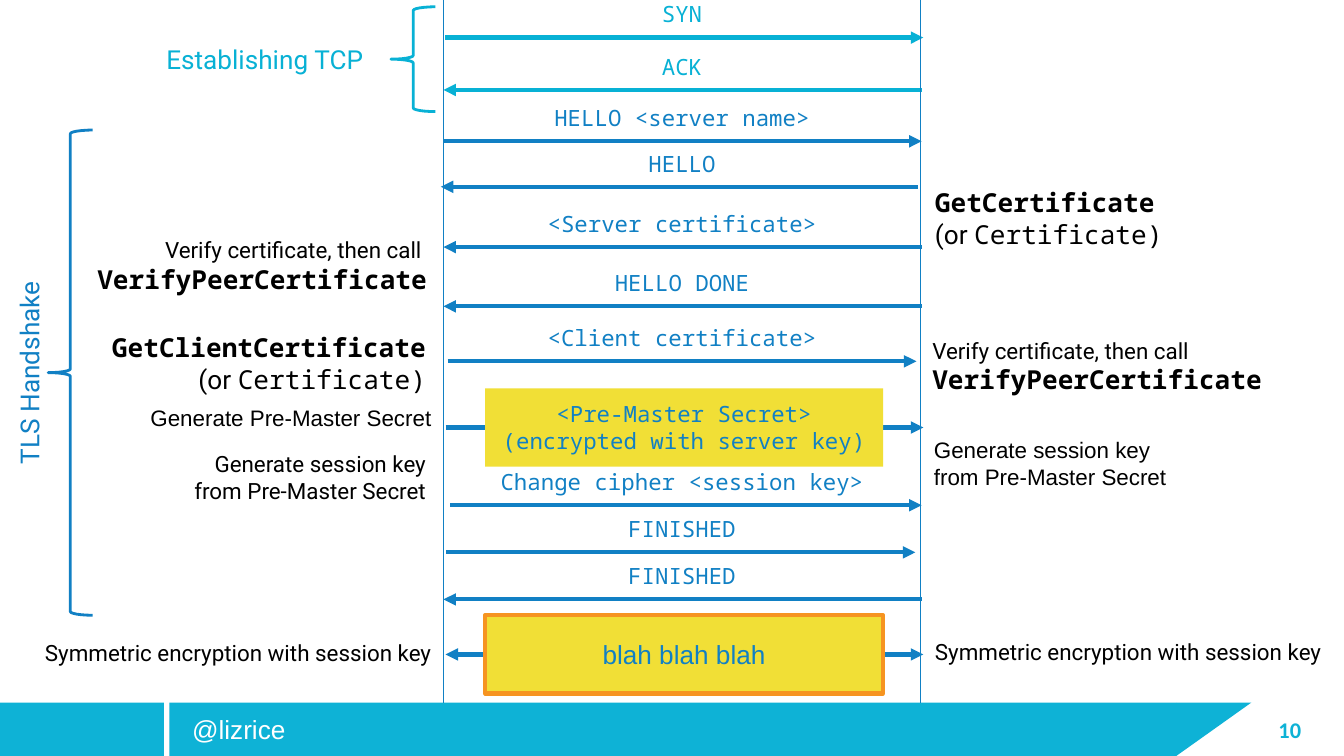
from dataclasses import dataclass

from lxml import etree
from pptx import Presentation
from pptx import util as u
from pptx.dml.color import RGBColor
from pptx.enum import shapes, text
from pptx.oxml import ns

SHAPE = shapes.MSO_SHAPE
ALIGN = text.PP_ALIGN
ANCHOR = text.MSO_ANCHOR


@dataclass(frozen=True)
class Theme:
    blue: str = "1180C4"
    cyan: str = "08B1D5"
    bar: str = "0EB2D6"
    yellow: str = "F1DF36"
    orange: str = "F69421"
    black: str = "000000"
    white: str = "FFFFFF"
    small: int = 12
    large: int = 14
    thin: float = 0.75
    medium: float = 1.5
    thick: float = 2.25
    inset: float = 0.25


@dataclass(frozen=True)
class Style:
    name: str
    size: int
    color: str
    bold: bool = False

    def apply(self, font):
        font.name, font.size, font.bold = self.name, u.Pt(self.size), self.bold
        font.color.rgb = RGBColor.from_string(self.color)


T = Theme()
BODY = Style("Roboto", T.small, T.black)
PLAIN = Style("Arial", T.small, T.black)
CODE = Style("Noto Sans Mono", T.large, T.black)
CODE_BOLD = Style("Noto Sans Mono", T.large, T.black, True)
OR = Style("Roboto", T.large, T.black)
MESSAGE = Style("Noto Sans Mono", T.small, T.blue)
TCP_MESSAGE = Style("Noto Sans Mono", T.small, T.cyan)

OR_CERTIFICATE = [("(or ", OR), ("Certificate)", CODE)]
VERIFY_PEER = [("VerifyPeerCertificate", CODE_BOLD)]


def box_cm(*lengths):
    return [u.Cm(v) for v in lengths]


def fill_text(sp, paragraphs, align, anchor=ANCHOR.TOP, inset_y=T.inset):
    tf = sp.text_frame
    tf.word_wrap = True
    tf.vertical_anchor = anchor
    tf.margin_left = tf.margin_right = u.Cm(T.inset)
    tf.margin_top = tf.margin_bottom = u.Cm(inset_y)
    for i, runs in enumerate(paragraphs):
        p = tf.add_paragraph() if i else tf.paragraphs[0]
        p.alignment = align
        if len(runs) == 1:
            p.text = runs[0][0]
            runs[0][1].apply(p.font)
            continue
        for content, style in runs:
            r = p.add_run()
            r.text = content
            style.apply(r.font)


def add_text(s, box, paragraphs, align, **options):
    sp = s.shapes.add_textbox(*box_cm(*box))
    fill_text(sp, paragraphs, align, **options)
    return sp


def add_block(s, kind, box, fill=None, line=None, width=T.thick):
    sp = s.shapes.add_shape(kind, *box_cm(*box))
    sp.shadow.inherit = False
    if fill:
        sp.fill.solid()
        sp.fill.fore_color.rgb = RGBColor.from_string(fill)
    else:
        sp.fill.background()
    if line:
        sp.line.color.rgb = RGBColor.from_string(line)
        sp.line.width = u.Pt(width)
    else:
        sp.line.fill.background()
    return sp


def add_line(s, x1, y1, x2, y2, color, width=T.thick, ends=()):
    c = s.shapes.add_connector(shapes.MSO_CONNECTOR.STRAIGHT, *box_cm(x1, y1, x2, y2))
    c.line.color.rgb = RGBColor.from_string(color)
    c.line.width = u.Pt(width)
    for end in ends:
        etree.SubElement(c.line._get_or_add_ln(), ns.qn(f"a:{end}"), type="triangle")
    etree.SubElement(c.element.spPr, ns.qn("a:effectLst"))


def add_footer(s, x, y, w, h):
    add_block(s, SHAPE.RECTANGLE, (x + 3.2, y, w - 6.37, h), T.bar)
    add_block(s, SHAPE.RECTANGLE, (x, y, 3.1, h), T.bar)
    corner = add_block(s, SHAPE.RIGHT_TRIANGLE, (x + w - 3.17, y, 1.42, h), T.bar)
    corner.rotation = 180
    corner.element.spPr.get_or_add_xfrm().set("flipH", "1")
    add_text(s, (x + w - 1.7, y + 0.13, 1.14, 0.76),
             [[("10", Style("Calibri", T.small, T.bar, True))]], ALIGN.RIGHT, inset_y=0.13)
    add_text(s, (x + 3.38, y, 6.93, h),
             [[("@lizrice", Style("Arial", T.large, T.white))]], ALIGN.LEFT,
             anchor=ANCHOR.MIDDLE)


def add_sequence(s, x, y, w, h):
    right, left = ("tailEnd",), ("headEnd",)
    messages = [
        ("SYN", 0.71, 0.03, 0.05, right, TCP_MESSAGE),
        ("ACK", 1.7, 0, 0.02, left, TCP_MESSAGE),
        ("HELLO <server name>", 2.67, 0, 0.02, right, MESSAGE),
        ("HELLO", 3.53, -0.05, -0.05, left, MESSAGE),
        ("<Server certificate>", 4.67, 0, 0.02, left, MESSAGE),
        ("HELLO DONE", 5.79, 0, 0.02, left, MESSAGE),
        ("<Client certificate>", 6.83, 0.08, -0.08, right, MESSAGE),
        ("Change cipher <session key>", 9.55, 0.13, 0.02, right, MESSAGE),
        ("FINISHED", 10.44, 0.05, -0.1, right, MESSAGE),
        ("FINISHED", 11.33, 0, 0.02, left, MESSAGE),
    ]
    for label, top, start, end, ends, style in messages:
        add_line(s, x + start, y + top, x + w + end, y + top, style.color, ends=ends)
        add_text(s, (x + 0.08, y + top - 0.95, w - 0.16, 0.89),
                 [[(label, style)]], ALIGN.CENTER)

    payloads = [
        (8.08, right, None,
         [[("<Pre-Master Secret>", MESSAGE)], [("(encrypted with server key)", MESSAGE)]]),
        (12.37, left + right, T.orange,
         [[("blah blah blah", Style("Arial", T.large, T.blue))]]),
    ]
    for middle, ends, outline, paragraphs in payloads:
        add_line(s, x + 0.04, y + middle, x + w + 0.05, y + middle, T.blue, ends=ends)
        sp = add_block(s, SHAPE.RECTANGLE, (x + 0.79, y + middle - 0.74, 7.52, 1.48),
                       T.yellow, outline)
        fill_text(sp, paragraphs, ALIGN.CENTER, anchor=ANCHOR.MIDDLE)

    for lifeline in (x, x + w):
        add_line(s, lifeline, y, lifeline, y + h, T.blue, T.thin)


def add_notes(s, x, y, w, align, notes):
    for shift, top, paragraphs in notes:
        add_text(s, (x + shift, y + top, w, 2.59), paragraphs, align)


def add_phase(s, x, y, w, h, color, label, label_box, rotation=0, **options):
    brace = add_block(s, SHAPE.LEFT_BRACE, (x, y, w, h), None, color, T.medium)
    brace.adjustments[0] = 0.083
    sp = add_text(s, label_box, [[(label, Style("Roboto", T.large, color))]], **options)
    sp.rotation = rotation


def main():
    prs = Presentation()
    prs.slide_width, prs.slide_height = box_cm(25.4, 14.29)
    s = prs.slides.add_slide(prs.slide_layouts[6])

    add_footer(s, 0, 13.28, 25.4, 1.01)
    add_sequence(s, 8.38, 0, 9.02, 13.28)
    add_notes(s, 0.43, 0, 7.98, ALIGN.RIGHT, [
        (-0.08, 4.22, [[("Verify certificate, then call ", BODY)], VERIFY_PEER]),
        (-0.1, 6.02, [[("GetClientCertificate", CODE_BOLD)], OR_CERTIFICATE]),
        (0, 7.39, [[("Generate Pre-Master Secret", PLAIN)]]),
        (0, 8.26, [[("Generate session key \vfrom Pre-Master Secret ", BODY)]]),
        (0, 11.84, [[("Symmetric encryption with session key", BODY)]]),
    ])
    add_notes(s, 17.42, 0, 8.05, ALIGN.LEFT, [
        (0, 3.28, [[("GetCertificate", CODE_BOLD)], OR_CERTIFICATE]),
        (-0.05, 6.12, [[("Verify certificate, then call", BODY)], VERIFY_PEER]),
        (-0.02, 8, [[("Generate session key\vfrom Pre-Master Secret", PLAIN)]]),
        (0, 11.81, [[("Symmetric encryption with session key", BODY)]]),
    ])
    add_phase(s, 7.39, 0.13, 0.84, 1.98, T.cyan, "Establishing TCP ",
              (2.72, 0.13, 4.52, 1.98), align=ALIGN.RIGHT, anchor=ANCHOR.MIDDLE)
    add_phase(s, 0.91, 2.46, 0.84, 9.17, T.blue, "TLS Handshake",
              (-2.21, 6.65, 5.21, 0.79), rotation=270, align=ALIGN.CENTER)

    prs.save("out.pptx")


if __name__ == "__main__":
    main()
